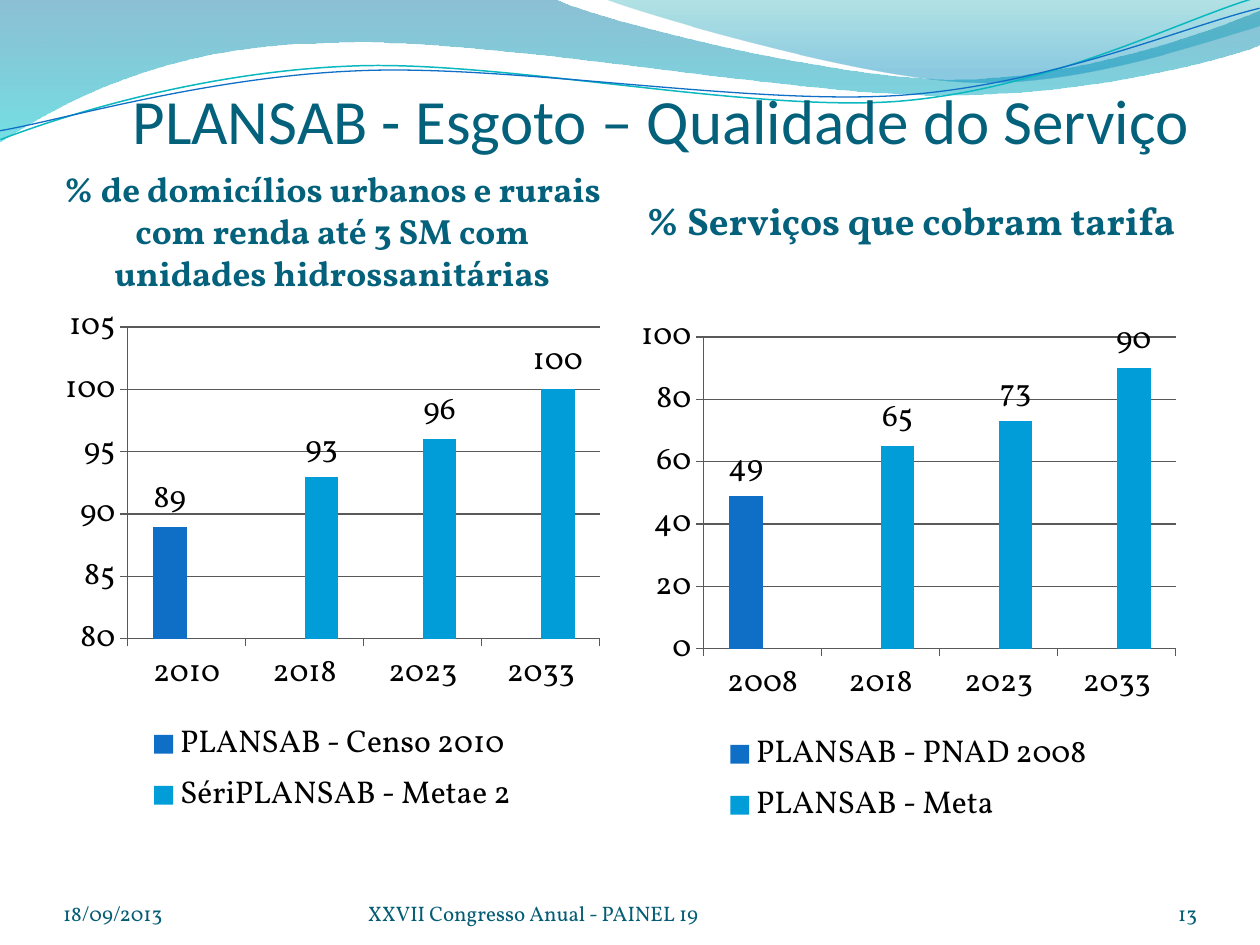
from lxml.etree import SubElement
from pptx import Presentation
from pptx.chart.data import CategoryChartData
from pptx.dml.color import RGBColor
from pptx.enum.chart import XL_CHART_TYPE as ChartType
from pptx.enum.chart import XL_LABEL_POSITION as LabelPosition
from pptx.enum.chart import XL_LEGEND_POSITION as LegendPosition
from pptx.enum.chart import XL_TICK_MARK as TickMark
from pptx.enum.text import MSO_ANCHOR as Anchor
from pptx.enum.text import PP_ALIGN as Align
from pptx.oxml.ns import qn
from pptx.util import Pt

PX = 914400 / 126
FONT = "Vollkorn"
TITLE_COLOR, FOOTER_COLOR = "04617B", "045D75"
BLUE, CYAN, GRID = "0F6FC6", "009DD9", "595959"


def emu(*lengths):
    """Turn pixel lengths into EMU."""
    return [round(length * PX) for length in lengths]


def color(value):
    return RGBColor.from_string(value)


deck = Presentation()
deck.slide_width, deck.slide_height = emu(1260, 945)
page = deck.slides.add_slide(deck.slide_layouts[6])

# Header waves: a start point, then line ends (2 numbers) or cubic curves (6 numbers).
# Filled waves have gradient stops (color, opacity) and the last stop's place.
waves = [
    dict(start=(0, 0), last=1, stops=[("0074A1", 45), ("00C6CF", 55)], parts=[
        (554, -1), (600, 21, 837, 79, 955, 79), (1075, 79, 1207, 33, 1260, 11),
        (1261, 45), (1238, 55, 1096, 96, 940, 95), (784, 95, 481, 35, 324, 43),
        (163, 45, 58, 105, -1, 142), (0, 0)]),
    dict(start=(604, -1), last=0.8, stops=[("00A1A9", 30), ("008BBF", 45)], parts=[
        (641, 14, 859, 78, 969, 82), (1079, 87, 1211, 40, 1260, 26), (1260, 0),
        (604, -1)]),
    dict(start=(-2, 110), line="0AB8BF", width=0.85, parts=[
        (58, 90, 199, 52, 350, 53), (499, 53, 745, 118, 896, 114),
        (1049, 109, 1184, 45, 1260, 27)]),
    dict(start=(-2, 101), line=BLUE, width=0.75, parts=[
        (57, 94, 207, 57, 357, 58), (509, 58, 751, 112, 902, 108),
        (1052, 104, 1188, 52, 1262, 38)]),
]
for wave in waves:
    points = [emu(*part[i:i + 2]) for part in wave["parts"] for i in range(0, len(part), 2)]
    builder = page.shapes.build_freeform(*emu(*wave["start"]))
    builder.add_line_segments(points, close="stops" in wave)
    shape = builder.convert_to_shape()
    shape.shadow.inherit = False

    # Join each curve's three points into one cubic segment
    segments = iter(list(shape._element.iter(qn("a:lnTo"))))
    for part in wave["parts"]:
        segment = next(segments)
        if len(part) == 6:
            segment.tag = qn("a:cubicBezTo")
            for extra in (next(segments), next(segments)):
                segment.append(extra[0])
                extra.getparent().remove(extra)

    if "line" in wave:
        shape.rotation = 357.3
        shape.fill.background()
        shape.line.color.rgb = color(wave["line"])
        shape.line.width = Pt(wave["width"])
        continue
    shape.line.fill.background()
    shape.fill.gradient()
    shape.fill.gradient_angle = 270
    places = (0, wave["last"])
    for stop, place, (value, _) in zip(shape.fill.gradient_stops, places, wave["stops"]):
        stop.position = place
        stop.color.rgb = color(value)
    for node, (_, opacity) in zip(shape._element.iter(qn("a:srgbClr")), wave["stops"]):
        SubElement(node, qn("a:alpha"), val=str(opacity * 1000))

# Title, chart headings and footer: text, frame, margins, anchor, alignment, look
title_margins, heading_margins, no_margins = (0, 6, 0, 0), (6, 0, 6, 0), (0, 0, 0, 0)
texts = [
    ("PLANSAB - Esgoto – Qualidade do Serviço", (94, 0, 1134, 157), title_margins,
     Anchor.BOTTOM, Align.CENTER, "Calibri", 36, False, TITLE_COLOR),
    ("% de domicílios urbanos e rurais com renda até 3 SM com unidades hidrossanitárias",
     (54, 185, 557, 91), heading_margins,
     Anchor.MIDDLE, Align.CENTER, FONT, 20, True, TITLE_COLOR),
    ("% Serviços que cobram tarifa", (640, 175, 557, 91), heading_margins,
     Anchor.MIDDLE, Align.LEFT, FONT, 22.2, True, TITLE_COLOR),
    ("13", (1092, 876, 105, 50), no_margins,
     Anchor.BOTTOM, Align.RIGHT, FONT, 12, False, FOOTER_COLOR),
    ("18/09/2013", (63, 876, 294, 50), no_margins,
     Anchor.BOTTOM, Align.LEFT, FONT, 12, False, FOOTER_COLOR),
    ("XXVII Congresso Anual - PAINEL 19", (368, 876, 462, 50), no_margins,
     Anchor.BOTTOM, Align.LEFT, FONT, 12, False, FOOTER_COLOR),
]
for text, frame, margins, anchor, align, font, size, bold, value in texts:
    box = page.shapes.add_textbox(*emu(*frame)).text_frame
    box.word_wrap = True
    box.vertical_anchor = anchor
    box.margin_left, box.margin_top, box.margin_right, box.margin_bottom = emu(*margins)
    para = box.paragraphs[0]
    para.alignment = align
    span = para.add_run()
    span.text = text
    span.font.name, span.font.size, span.font.bold = font, Pt(size), bold
    span.font.color.rgb = color(value)

# Charts: left, top, first year, value axis (low, high, step), series
charts = [
    (54, 294, "2010", (80, 105, 5), [
        ("PLANSAB - Censo 2010", (89, None, None, None)),
        ("SériPLANSAB - Metae 2", (None, 93, 96, 100))]),
    (630, 304, "2008", (0, 100, 20), [
        ("PLANSAB - PNAD 2008", (49, None, None, None)),
        ("PLANSAB - Meta", (None, 65, 73, 90))]),
]
for left, top, first_year, (low, high, step), rows in charts:
    data = CategoryChartData()
    data.categories = [first_year, "2018", "2023", "2033"]
    for name, values in rows:
        data.add_series(name, values)
    chart = page.shapes.add_chart(
        ChartType.COLUMN_CLUSTERED, *emu(left, top, 557, 530), data).chart
    chart.has_title = False
    chart.font.name, chart.font.size = FONT, Pt(18)
    chart.font.color.rgb = color("000000")
    chart.has_legend = True
    chart.legend.position = LegendPosition.BOTTOM
    chart.legend.include_in_layout = False

    scale = chart.value_axis
    scale.minimum_scale, scale.maximum_scale, scale.major_unit = low, high, step
    scale.has_major_gridlines = True
    lines = [scale.major_gridlines.format.line]
    for axis in (scale, chart.category_axis):
        axis.major_tick_mark = TickMark.OUTSIDE
        lines.append(axis.format.line)
    for line in lines:
        line.color.rgb = color(GRID)
        line.width = Pt(0.75)

    plot = chart.plots[0]
    plot.gap_width, plot.overlap, plot.vary_by_categories = 150, 0, False
    for series, value in zip(plot.series, (BLUE, CYAN)):
        series.format.fill.solid()
        series.format.fill.fore_color.rgb = color(value)
        series.data_labels.show_value = True
        series.data_labels.position = LabelPosition.OUTSIDE_END

deck.save("out.pptx")
